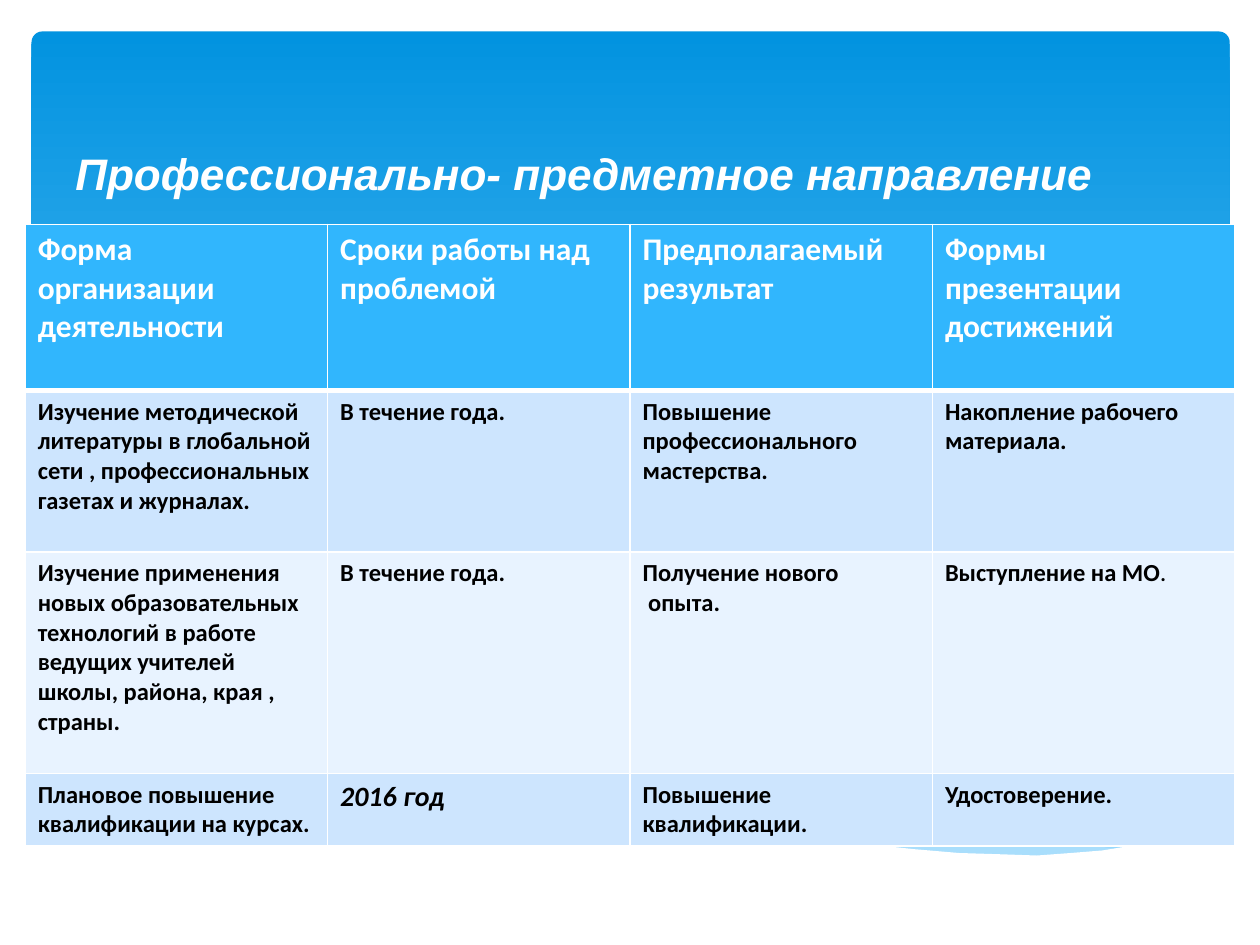
from dataclasses import dataclass

from lxml.etree import SubElement
from pptx import Presentation
from pptx.dml.color import RGBColor
from pptx.enum.shapes import MSO_SHAPE as Shape
from pptx.enum.text import MSO_ANCHOR as Anchor
from pptx.oxml.ns import qn
from pptx.util import Inches, Pt

WIDTH, HEIGHT = Inches(10), Inches(7.5)
HUNDREDTH = 9144  # EMU in 0.01 inch, the unit of the wave points


@dataclass(frozen=True)
class Theme:
    white: str = "FFFFFF"
    black: str = "000000"
    sky: tuple = ("0293E0", "83D3FE")
    mist: str = "C6E7FC"
    header: str = "31B6FD"
    bands: tuple = ("CDE5FE", "E8F3FF")
    title_font: str = "Arial"
    table_font: str = "Calibri"
    title_size: float = 25.2
    header_size: int = 18
    body_size: int = 14
    year_size: int = 16
    dot_size: int = 12


THEME = Theme()

RIGHT_WAVE = [
    (976, 601), (950, 606), (922, 611), (892, 618), (862, 625), (806, 638),
    (754, 650), (707, 659), (662, 667), (692, 671), (719, 674), (745, 677),
    (770, 679), (793, 679), (815, 680), (836, 679), (855, 678), (873, 676),
    (890, 674), (907, 671), (922, 667), (937, 663), (951, 659), (964, 654),
    (977, 649), (977, 601)]
LONG_WAVE = [
    (894, 675), (867, 671), (808, 662), (742, 649), (669, 633), (630, 624),
    (599, 616), (570, 610), (542, 605), (515, 600), (489, 596), (442, 591),
    (400, 588), (362, 588), (328, 589), (287, 593), (323, 598), (363, 605),
    (405, 613), (450, 624), (530, 642), (602, 657), (651, 666), (696, 672),
    (737, 677), (774, 679), (808, 680), (839, 680), (868, 678)]
LONG_CREST = [
    (310, 597), (329, 594), (353, 591), (388, 589), (433, 589), (469, 590),
    (511, 594), (557, 598), (609, 606), (666, 615), (728, 628), (796, 643),
    (869, 662), (908, 673)]
RIGHT_CREST = [
    (614, 659), (653, 648), (696, 637), (749, 625), (807, 612), (867, 600),
    (897, 596), (925, 592), (952, 589), (976, 587)]
WHITE_WAVE = [
    (977, 648), (959, 655), (940, 661), (920, 667), (899, 671), (875, 675),
    (850, 677), (823, 679), (793, 678), (761, 677), (726, 674), (688, 670),
    (647, 664), (603, 656), (555, 647), (503, 635), (447, 622), (391, 609),
    (339, 599), (292, 592), (250, 588), (211, 586), (177, 586), (146, 587),
    (119, 589), (95, 593), (75, 597), (59, 601), (46, 605), (36, 609),
    (23, 615), (23, 731), (977, 731)]

COLUMNS = 4
ROW_HEIGHTS = (1.32, 1.28, 1.76, 0.57)
# A cell is text, or a list of (text, format) runs; a newline starts a paragraph.
ROWS = [
    ["Форма организации деятельности", "Сроки работы над проблемой",
     "Предполагаемый результат", "Формы презентации\nдостижений"],
    ["Изучение методической литературы в глобальной сети , "
     "профессиональных газетах и журналах.", "В течение года.",
     "Повышение профессионального мастерства.",
     "Накопление рабочего материала."],
    ["Изучение применения новых образовательных технологий в работе "
     "ведущих учителей школы, района, края , страны.", "В течение года.",
     "Получение нового\n опыта.",
     [("Выступление на МО", {}), (".", {"size": Pt(THEME.dot_size)})]],
    ["Плановое повышение квалификации на курсах.",
     [("2016 год", {"size": Pt(THEME.year_size), "italic": True})],
     "Повышение квалификации.", "Удостоверение."],
]


def rgb(color):
    return RGBColor.from_string(color)


def add_run(p, text, color, **font_format):
    r = p.add_run()
    r.text = text
    for name, value in font_format.items():
        setattr(r.font, name, value)
    r.font.color.rgb = rgb(color)


def add_sky(slide):
    s = slide.shapes.add_shape(Shape.ROUNDED_RECTANGLE, Inches(0.25),
                               Inches(0.25), Inches(9.51), Inches(6.6))
    s.adjustments[0] = 0.013
    s.shadow.inherit = False
    s.line.fill.background()
    s.fill.gradient()
    s.fill.gradient_angle = 270
    for stop, color, position in zip(s.fill.gradient_stops, THEME.sky, (0, 1)):
        stop.color.rgb = rgb(color)
        stop.position = position


def add_curve(slide, points, close):
    builder = slide.shapes.build_freeform(*points[0], scale=HUNDREDTH)
    builder.add_line_segments(points[1:], close=close)
    s = builder.convert_to_shape()
    s.shadow.inherit = False
    return s


def add_wave(slide, points, color, opacity=100):
    s = add_curve(slide, points, close=True)
    s.line.fill.background()
    s.fill.solid()
    s.fill.fore_color.rgb = rgb(color)
    if opacity < 100:
        clr = s._element.spPr.find(f"{qn('a:solidFill')}/{qn('a:srgbClr')}")
        SubElement(clr, qn("a:alpha"), val=str(opacity * 1000))


def add_crest(slide, points):
    s = add_curve(slide, points, close=False)
    s.fill.background()
    s.line.color.rgb = rgb(THEME.white)
    s.line.width = 0


def add_title(slide, text):
    s = slide.shapes.add_textbox(WIDTH * 0.05, Inches(0.21), WIDTH * 0.9,
                                 Inches(1.42))
    tf = s.text_frame
    tf.word_wrap = True
    tf.vertical_anchor = Anchor.BOTTOM
    add_run(tf.paragraphs[0], text, THEME.white, name=THEME.title_font,
            size=Pt(THEME.title_size), bold=True, italic=True)


def set_borders(cell, **widths):
    tcPr = cell._tc.get_or_add_tcPr()
    for side in "LRTB":
        ln = SubElement(tcPr, qn(f"a:ln{side}"), w=str(Pt(widths.get(side, 1))))
        SubElement(SubElement(ln, qn("a:solidFill")), qn("a:srgbClr"),
                   val=THEME.white)


def fill_cell(cell, content, row):
    is_header = row == 0
    set_borders(cell, **{0: {"B": 3}, 1: {"T": 3}}.get(row, {}))
    cell.fill.solid()
    cell.fill.fore_color.rgb = rgb(
        THEME.header if is_header else THEME.bands[(row - 1) % 2])
    base = {"name": THEME.table_font, "bold": True,
            "size": Pt(THEME.header_size if is_header else THEME.body_size)}
    color = THEME.white if is_header else THEME.black
    tf = cell.text_frame
    if isinstance(content, str):
        paragraphs = [[(line, {})] for line in content.split("\n")]
    else:
        paragraphs = [content]
    for i, runs in enumerate(paragraphs):
        p = tf.add_paragraph() if i else tf.paragraphs[0]
        for text, extra in runs:
            add_run(p, text, color, **{**base, **extra})


def add_plan_table(slide):
    table = slide.shapes.add_table(
        len(ROWS), COLUMNS, Inches(0.2), Inches(1.78), WIDTH * 0.96,
        Inches(sum(ROW_HEIGHTS))).table
    for row, (height, contents) in enumerate(zip(ROW_HEIGHTS, ROWS)):
        table.rows[row].height = Inches(height)
        for col, content in enumerate(contents):
            fill_cell(table.cell(row, col), content, row)


def main():
    prs = Presentation()
    prs.slide_width, prs.slide_height = WIDTH, HEIGHT
    slide = prs.slides.add_slide(prs.slide_layouts[6])
    add_sky(slide)
    add_wave(slide, RIGHT_WAVE, THEME.mist, opacity=29)
    add_wave(slide, LONG_WAVE, THEME.mist, opacity=40)
    add_crest(slide, LONG_CREST)
    add_crest(slide, RIGHT_CREST)
    add_wave(slide, WHITE_WAVE, THEME.white)
    add_plan_table(slide)
    add_title(slide, "Профессионально- предметное направление")
    prs.save("out.pptx")


if __name__ == "__main__":
    main()
